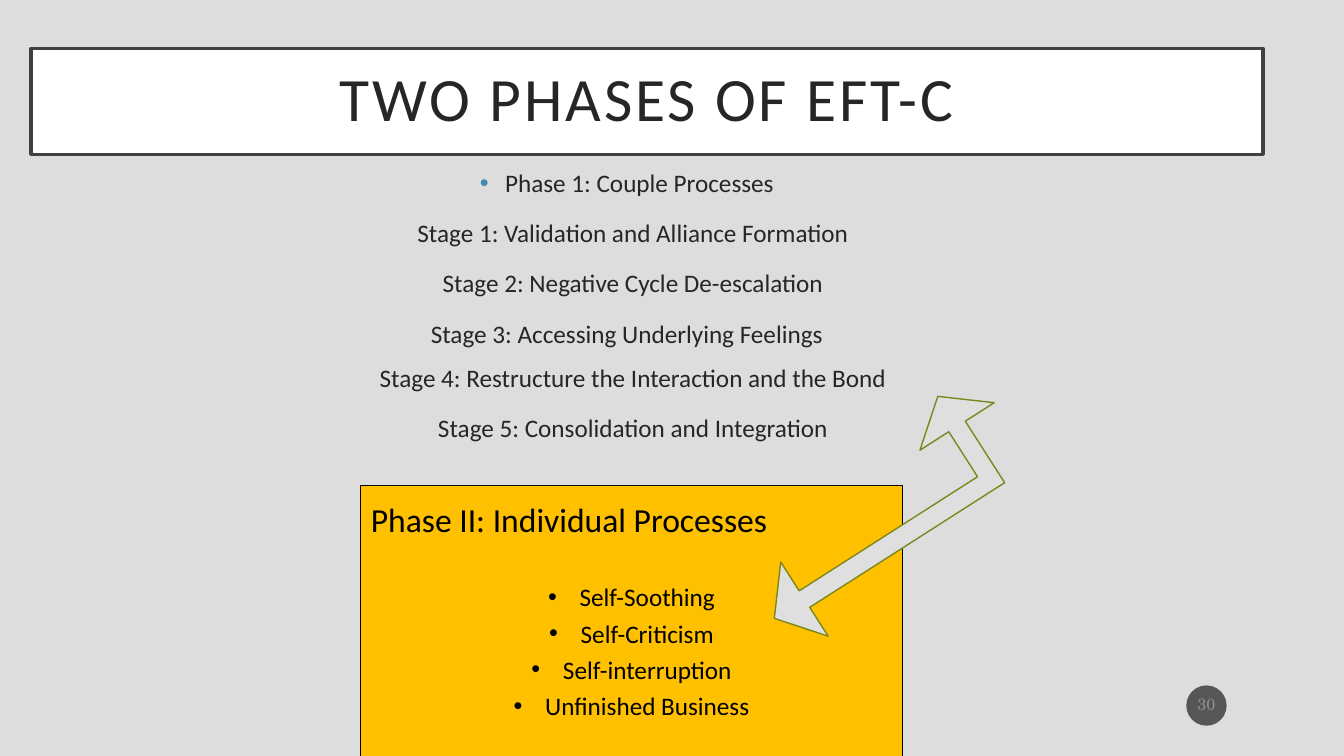
from lxml import etree
from pptx import Presentation
from pptx.dml.color import RGBColor
from pptx.enum.shapes import MSO_SHAPE
from pptx.enum.text import MSO_ANCHOR, PP_ALIGN
from pptx.oxml.ns import qn
from pptx.util import Pt

RECTANGLE, OVAL = MSO_SHAPE.RECTANGLE, MSO_SHAPE.OVAL
LEFT_UP_ARROW = MSO_SHAPE.LEFT_UP_ARROW
LEFT, CENTER = PP_ALIGN.LEFT, PP_ALIGN.CENTER
TOP, MIDDLE = MSO_ANCHOR.TOP, MSO_ANCHOR.MIDDLE

# Content
TITLE = "TWO PHASES OF EFT-C"
PHASE_ONE = "Phase 1: Couple Processes"
# Stage text, line spacing, left indent
STAGES = [
    ("Stage 1: Validation and Alliance Formation", 1.2, 8.6),
    ("Stage 2: Negative Cycle De-escalation", 1.2, 8.6),
    ("Stage 3: Accessing Underlying Feelings", 1.2, 0),
    ("Stage 4: Restructure the Interaction and the Bond", 1.0, 8.6),
    ("Stage 5: Consolidation and Integration", 1.2, 8.6),
]
PHASE_TWO = "Phase II: Individual Processes"
PROCESSES = ["Self-Soothing", "Self-Criticism", "Self-interruption", "Unfinished Business"]
PAGE_NUMBER = "30"

THEME = {
    "font": "Calibri", "number_font": "TeX Gyre Schola",
    "background": "DDDDDD", "title_fill": "FFFFFF", "title_line": "404040",
    "text": "262626", "bullet": "418AB3", "box": "FFC000", "black": "000000",
    "arrow": "DFDFDF", "arrow_line": "7B871D", "badge": "1D1D1D", "number": "8E8E94",
    "title_size": 44, "heading_size": 24, "body_size": 18, "number_size": 11.7,
}

# Layout in points: left, top, width, height
SLIDE_SIZE = (960, 540)
TITLE_BOX = (22.3, 34.6, 879.8, 75.6)
STAGE_BOX = (33.8, 115.9, 828, 225.4)
PHASE_TWO_BOX = (257.8, 347, 386.6, 195)
ARROW_BOX = (525.6, 316.1, 215.3, 102.2)
BADGE_BOX = (847.4, 489.6, 28.8, 28.8)


def color(name):
    return RGBColor.from_string(THEME[name])


def add_block(slide, kind, box, fill, line=None, line_width=1):
    shape = slide.shapes.add_shape(kind, *map(Pt, box))
    shape.shadow.inherit = False
    shape.fill.solid()
    shape.fill.fore_color.rgb = color(fill)
    if line:
        shape.line.color.rgb = color(line)
        shape.line.width = Pt(line_width)
    else:
        shape.line.fill.background()
    return shape


def set_frame(shape, anchor=TOP, horizontal=7.2, vertical=3.6):
    frame = shape.text_frame
    values = {
        "word_wrap": True, "vertical_anchor": anchor,
        "margin_left": Pt(horizontal), "margin_right": Pt(horizontal),
        "margin_top": Pt(vertical), "margin_bottom": Pt(vertical),
    }
    for name, value in values.items():
        setattr(frame, name, value)
    return frame


def add_line(frame, text, size, ink, font="font", align=CENTER, spacing=1.0,
             before=0, indent=0, hanging=0, bullet=None):
    paragraph = frame.paragraphs[0]
    if paragraph.runs:
        paragraph = frame.add_paragraph()
    values = {"alignment": align, "line_spacing": spacing, "space_before": Pt(before)}
    for name, value in values.items():
        setattr(paragraph, name, value)
    run = paragraph.add_run()
    run.text = text
    values = {"name": THEME[font], "size": Pt(THEME[size])}
    for name, value in values.items():
        setattr(run.font, name, value)
    run.font.color.rgb = color(ink)

    # Indents and bullet
    properties = paragraph._p.get_or_add_pPr()
    properties.set("marL", str(Pt(indent)))
    properties.set("indent", str(Pt(-hanging)))
    if bullet:
        bullet_color = etree.SubElement(properties, qn("a:buClr"))
        etree.SubElement(bullet_color, qn("a:srgbClr"), val=THEME[bullet])
        etree.SubElement(properties, qn("a:buFont"), typeface="Arial")
        etree.SubElement(properties, qn("a:buChar"), char="•")
    return run


def main():
    presentation = Presentation()
    presentation.slide_width, presentation.slide_height = map(Pt, SLIDE_SIZE)
    slide = presentation.slides.add_slide(presentation.slide_layouts[6])
    slide.background.fill.solid()
    slide.background.fill.fore_color.rgb = color("background")

    # Title
    title = add_block(slide, RECTANGLE, TITLE_BOX, "title_fill", "title_line", 2.5)
    frame = set_frame(title, MIDDLE, 14.4, 14.4)
    run = add_line(frame, TITLE, "title_size", "text", spacing=0.9)
    run._r.get_or_add_rPr().set("spc", "200")

    # Phase 1 and its stages
    frame = set_frame(slide.shapes.add_textbox(*map(Pt, STAGE_BOX)))
    add_line(frame, PHASE_ONE, "body_size", "text", indent=18, hanging=18, bullet="bullet")
    for stage, spacing, indent in STAGES:
        add_line(frame, stage, "body_size", "text", spacing=spacing, before=10, indent=indent)

    # Page number badge
    badge = add_block(slide, OVAL, BADGE_BOX, "badge")
    fill_color = badge._element.spPr.find(qn("a:solidFill"))[0]
    etree.SubElement(fill_color, qn("a:alpha"), val="70000")
    frame = set_frame(badge, MIDDLE, 1.4, 3.6)
    add_line(frame, PAGE_NUMBER, "number_size", "number", font="number_font", spacing=0.8)

    # Phase II and its processes
    phase_two = add_block(slide, RECTANGLE, PHASE_TWO_BOX, "box", "black", 0.75)
    frame = set_frame(phase_two)
    add_line(frame, PHASE_TWO, "heading_size", "black", align=LEFT, spacing=1.2)
    for index, process in enumerate(PROCESSES):
        add_line(frame, process, "body_size", "black", spacing=1.2,
                 before=0 if index else 26, indent=22.5, hanging=22.5, bullet="black")

    # Arrow between the phases
    arrow = add_block(slide, LEFT_UP_ARROW, ARROW_BOX, "arrow", "arrow_line")
    arrow.rotation = 327.4
    for index, value in enumerate((0.137, 0.308, 0.25)):
        arrow.adjustments[index] = value

    presentation.save("out.pptx")


if __name__ == "__main__":
    main()
